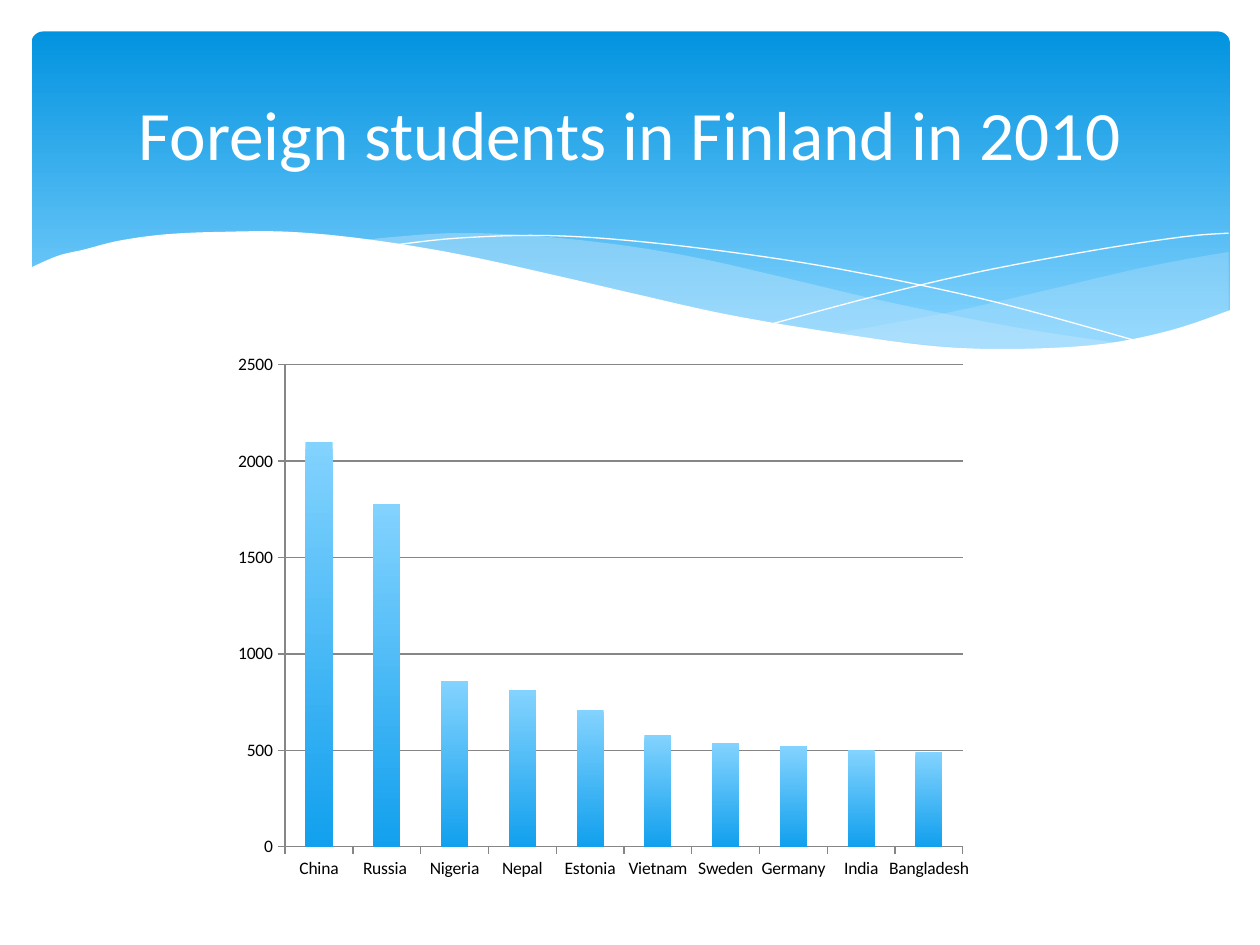
"""Build a slide with a wave banner and a column chart of foreign students in Finland."""
from lxml import etree
from pptx import Presentation
from pptx import util as u
from pptx.chart.data import CategoryChartData
from pptx.dml.color import RGBColor
from pptx.enum import chart as charts, shapes, text
from pptx.oxml import ns

Pt = u.Pt
WHITE = RGBColor(0xFF, 0xFF, 0xFF)
BLACK = RGBColor(0, 0, 0)
GRAY = RGBColor(0x86, 0x86, 0x86)
DEEP_BLUE = RGBColor(0x02, 0x93, 0xE0)
BAR_BLUE = RGBColor(0x12, 0xA0, 0xEE)
SKY_BLUE = RGBColor(0x83, 0xD3, 0xFE)
PALE_BLUE = RGBColor(0xC6, 0xE7, 0xFC)
FONT = "Calibri"

TITLE = "Foreign students in Finland in 2010"
STUDENTS = {
    "China": 2100, "Russia ": 1780, "Nigeria": 860, "Nepal": 810, "Estonia": 710,
    "Vietnam": 580, "Sweden": 540, "Germany": 520, "India": 500, "Bangladesh": 490,
}

RIGHT_SWELL = [
    [(702, 144), (673, 149), (641.5, 155.5), (599, 165.6), (542, 178.6), (476, 190.8)],
    [(476, 190.8), (517.7, 195.8), (562.3, 199.4), (601.2, 199.4), (640.5, 195.8),
     (673.2, 188.6), (702, 177.8)],
]
MIDDLE_SWELL = [
    [(643, 196.6), (581, 187.2), (508.3, 172.8), (452.9, 159.8), (399.6, 147.6),
     (352, 139.7), (302.4, 134.6), (260, 133.2), (225.4, 135.4), (205.9, 137.5)],
    [(205.9, 137.5), (260.6, 146.2), (323.3, 159.8), (381.6, 172.8), (432.7, 183.6),
     (478.8, 191.5), (520, 197.3), (565.2, 200.2), (610.6, 199.8), (643, 196.6)],
]
FALLING_LINE = [
    [(222.5, 140.4), (261.4, 136.1), (311.8, 134.6), (367.2, 138.2), (437.8, 146.9),
     (500.4, 157.7), (572.4, 173.5), (653, 195.8)],
]
RISING_LINE = [
    [(441.4, 185), (500.4, 169.2), (558.7, 155.5), (623.5, 143.3), (675.4, 135.4),
     (702, 133.2)],
]
LOWER_WAVE = [
    [(703.4, 177.1), (669.6, 188.6), (630, 196.6), (582.5, 199.4), (535.7, 198),
     (481, 190.8), (416.9, 180), (362.2, 167.8), (321.8, 158.4), (262.8, 145.4),
     (210.2, 136.8), (165.6, 132.5), (127.4, 132.5), (95, 133.9), (68.4, 137.5),
     (48.2, 142.6), (33.1, 146.2), (16.6, 153.4)],
    [(16.6, 236.9), (703.4, 236.9)],
]
FILLED_WAVES = [(RIGHT_SWELL, PALE_BLUE, 29), (MIDDLE_SWELL, PALE_BLUE, 40)]
WAVE_LINES = [FALLING_LINE, RISING_LINE]


def smooth(knots, steps=6):
    """Return points on a Catmull-Rom curve through the knots."""
    if len(knots) < 3:
        return knots
    padded = [knots[0], *knots, knots[-1]]
    points = [knots[0]]
    for a, b, c, d in zip(padded, padded[1:], padded[2:], padded[3:]):
        for step in range(1, steps + 1):
            t = step / steps
            points.append(tuple(
                (2 * q + (r - p) * t + (2 * p - 5 * q + 4 * r - s) * t ** 2
                 + (3 * q - p - 3 * r + s) * t ** 3) / 2
                for p, q, r, s in zip(a, b, c, d)))
    return points


def add_wave(slide, curves, closed):
    points = [(Pt(x), Pt(y)) for curve in curves for x, y in smooth(curve)]
    builder = slide.shapes.build_freeform(*points[0])
    builder.add_line_segments(points[1:], close=closed)
    shape = builder.convert_to_shape()
    shape.shadow.inherit = False
    return shape


def add_filled_wave(slide, curves, color, opacity):
    shape = add_wave(slide, curves, True)
    shape.line.fill.background()
    shape.fill.solid()
    shape.fill.fore_color.rgb = color
    if opacity < 100:
        color_element = shape.element.spPr.find(".//" + ns.qn("a:srgbClr"))
        etree.SubElement(color_element, ns.qn("a:alpha"), val=str(opacity * 1000))


def set_gradient(fill, top, bottom, end=1.0):
    fill.gradient()
    fill.gradient_angle = 270
    for stop, color, position in zip(fill.gradient_stops, (top, bottom), (0, end)):
        stop.color.rgb = color
        stop.position = position


def add_banner(slide):
    banner = slide.shapes.add_shape(
        shapes.MSO_SHAPE.ROUNDED_RECTANGLE, Pt(18), Pt(18), Pt(684.7), Pt(194.4))
    banner.adjustments[0] = 0.034
    banner.shadow.inherit = False
    banner.line.fill.background()
    set_gradient(banner.fill, DEEP_BLUE, SKY_BLUE, 0.9)
    for wave in FILLED_WAVES:
        add_filled_wave(slide, *wave)
    for curves in WAVE_LINES:
        line = add_wave(slide, curves, False)
        line.fill.background()
        line.line.color.rgb = WHITE
        line.line.width = Pt(0)
    add_filled_wave(slide, LOWER_WAVE, WHITE, 100)


def place_title(slide):
    title = slide.shapes.title
    title.element.getparent().append(title.element)
    title.left, title.top, title.width, title.height = Pt(36), Pt(26.6), Pt(648), Pt(98.6)
    title.text_frame.text = TITLE
    title.text_frame.vertical_anchor = text.MSO_ANCHOR.MIDDLE
    paragraph = title.text_frame.paragraphs[0]
    paragraph.alignment = text.PP_ALIGN.CENTER
    paragraph.font.name = FONT
    paragraph.font.size = Pt(39.6)
    paragraph.font.color.rgb = WHITE


def add_student_chart(slide):
    data = CategoryChartData()
    data.categories = list(STUDENTS)
    data.add_series("Series 1", list(STUDENTS.values()))
    chart = slide.shapes.add_chart(
        charts.XL_CHART_TYPE.COLUMN_CLUSTERED,
        Pt(127.4), Pt(196.6), Pt(434.9), Pt(311.8), data).chart
    chart.has_title = False
    chart.has_legend = False
    chart.font.name = FONT
    chart.font.size = Pt(10)
    chart.font.color.rgb = BLACK
    plot = chart.plots[0]
    plot.vary_by_categories = False
    plot.gap_width = 150
    set_gradient(plot.series[0].format.fill, SKY_BLUE, BAR_BLUE)
    value_axis = chart.value_axis
    value_axis.minimum_scale, value_axis.maximum_scale = 0, 2500
    value_axis.major_unit = 500
    value_axis.has_major_gridlines = True
    for axis in (chart.category_axis, value_axis):
        axis.major_tick_mark = charts.XL_TICK_MARK.OUTSIDE
        axis.format.line.color.rgb = GRAY
    value_axis.major_gridlines.format.line.color.rgb = GRAY


def main():
    presentation = Presentation()
    presentation.slide_width, presentation.slide_height = Pt(720), Pt(540)
    slide = presentation.slides.add_slide(presentation.slide_layouts[5])
    add_banner(slide)
    place_title(slide)
    add_student_chart(slide)
    presentation.save("out.pptx")


if __name__ == "__main__":
    main()
